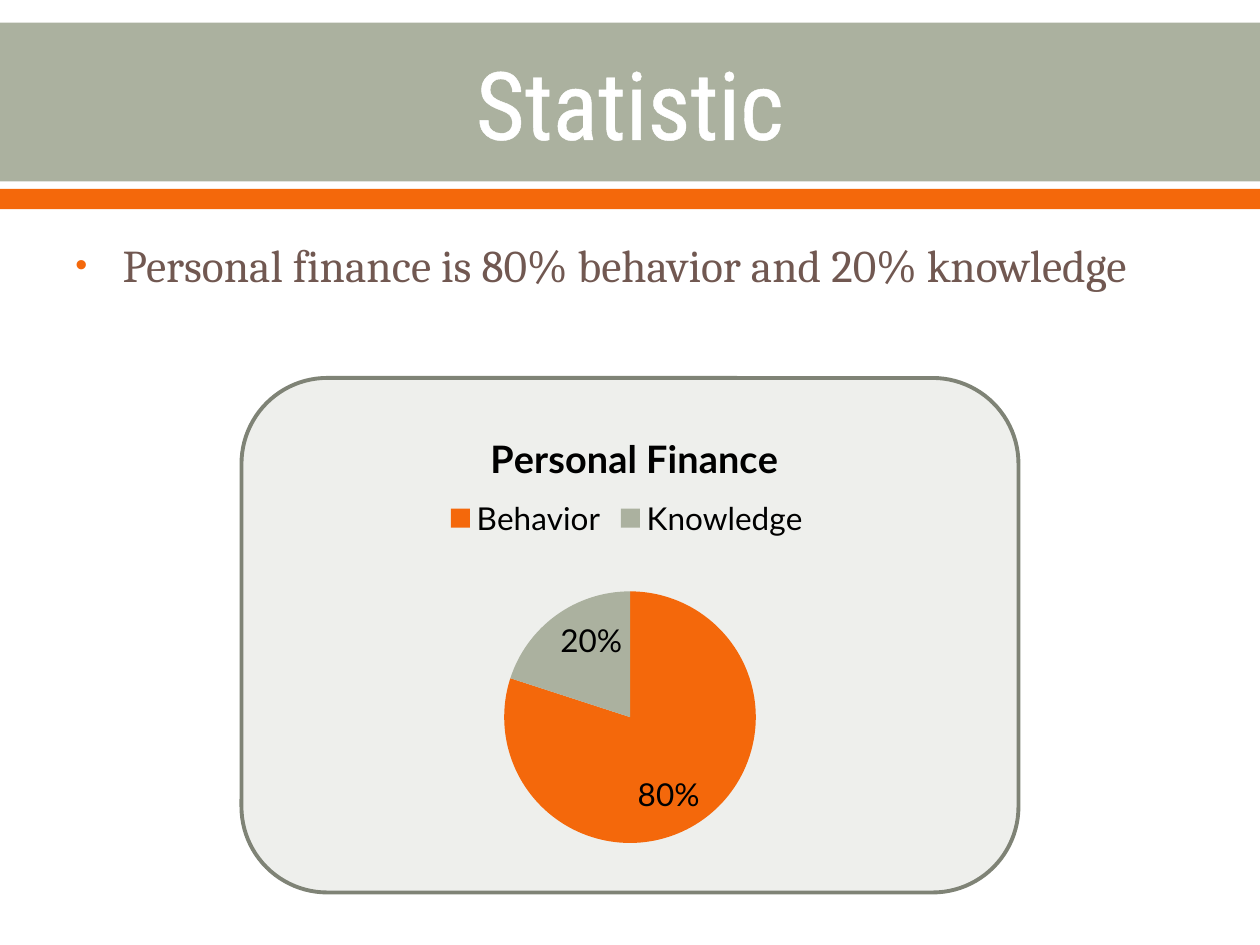
from dataclasses import dataclass

from lxml.etree import SubElement
from pptx import Presentation
from pptx.chart.data import CategoryChartData
from pptx.dml.color import RGBColor
from pptx.enum.chart import XL_CHART_TYPE, XL_LABEL_POSITION, XL_LEGEND_POSITION
from pptx.enum.shapes import MSO_SHAPE
from pptx.enum.text import MSO_ANCHOR, PP_ALIGN
from pptx.oxml import parse_xml
from pptx.oxml.ns import nsdecls, qn
from pptx.util import Pt

HEX = {
    "white": "FFFFFF", "sage": "ABB19F", "orange": "F4680B",
    "brown": "715851", "panel": "EEEFEC", "edge": "7F8376", "black": "000000",
}


@dataclass
class Box:
    left: float
    top: float
    width: float
    height: float

    def span(self) -> tuple:
        return Pt(self.left), Pt(self.top), Pt(self.width), Pt(self.height)


@dataclass
class Block:
    box: Box
    fill: str
    kind: MSO_SHAPE = MSO_SHAPE.RECTANGLE
    line: str = ""


BLOCKS = [
    Block(Box(0, 13, 720, 90.7), "sage"),
    Block(Box(0, 108, 720, 11.5), "orange"),
    Block(Box(138, 216, 444, 294), "panel", MSO_SHAPE.ROUNDED_RECTANGLE, "edge"),
]


def tint(name: str) -> RGBColor:
    return RGBColor.from_string(HEX[name])


def style(font, face: str, size: float, name: str, bold: bool = False) -> None:
    font.name, font.size, font.bold = face, Pt(size), bold
    font.color.rgb = tint(name)


def draw(slide, block: Block) -> None:
    shape = slide.shapes.add_shape(block.kind, *block.box.span())
    shape.shadow.inherit = False
    shape.fill.solid()
    shape.fill.fore_color.rgb = tint(block.fill)
    if block.line:
        shape.line.color.rgb = tint(block.line)
        shape.line.width = Pt(2.22)
    else:
        shape.line.fill.background()


def head(slide) -> None:
    title = slide.shapes.title
    title.left, title.top, title.width, title.height = Box(36, 14.4, 648, 87.8).span()
    frame = title.text_frame
    frame.vertical_anchor = MSO_ANCHOR.MIDDLE
    para = frame.paragraphs[0]
    para.alignment = PP_ALIGN.CENTER
    run = para.add_run()
    run.text = "Statistic"
    style(run.font, "Roboto Condensed", 54, "white")
    # Thin white outline on the letters
    run.font._element.insert(0, parse_xml(
        f'<a:ln {nsdecls("a")} w="{Pt(1.1)}"><a:solidFill>'
        f'<a:srgbClr val="{HEX["white"]}"/></a:solidFill></a:ln>'))
    # Bring the title in front of its band
    title.element.getparent().append(title.element)


def bullet(slide) -> None:
    frame = slide.shapes.add_textbox(*Box(36, 131.8, 648, 390).span()).text_frame
    frame.word_wrap = True
    para = frame.paragraphs[0]
    para.space_before = Pt(5.2)
    props = para._p.get_or_add_pPr()
    props.set("marL", str(Pt(27)))
    props.set("indent", str(Pt(-27)))
    color = SubElement(props, qn("a:buClr"))
    SubElement(color, qn("a:srgbClr"), val=HEX["orange"])
    SubElement(props, qn("a:buSzPct"), val="75000")
    SubElement(props, qn("a:buFont"), typeface="Arial")
    SubElement(props, qn("a:buChar"), char="•")
    run = para.add_run()
    run.text = "Personal finance is 80% behavior and 20% knowledge"
    style(run.font, "Cambria", 26, "brown")


def place(part, index: int, inner: bool = False, **spots: float) -> None:
    """Give a chart part a fixed place, in shares of the chart."""
    for old in part.findall(qn("c:layout")):
        part.remove(old)
    target = '<c:layoutTarget val="inner"/>' if inner else ""
    modes = '<c:xMode val="edge"/><c:yMode val="edge"/>'
    vals = "".join(f'<c:{key} val="{val}"/>' for key, val in spots.items())
    part.insert(index, parse_xml(
        f'<c:layout {nsdecls("c")}><c:manualLayout>{target}{modes}{vals}'
        '</c:manualLayout></c:layout>'))


def pie(slide) -> None:
    data = CategoryChartData()
    data.categories = ["Behavior", "Knowledge"]
    data.add_series("Personal Finance", [80, 20])
    chart = slide.shapes.add_chart(
        XL_CHART_TYPE.PIE, *Box(114, 228, 492, 282).span(), data).chart
    style(chart.font, "Lato", 18, "black")

    # Chart title
    chart.has_title = True
    run = chart.chart_title.text_frame.paragraphs[0].add_run()
    run.text = "Personal Finance"
    style(run.font, "Lato", 21.6, "black", True)

    # Legend
    chart.has_legend = True
    chart.legend.position = XL_LEGEND_POSITION.TOP
    chart.legend.include_in_layout = False

    # Slices and labels
    plot = chart.plots[0]
    plot.vary_by_categories = True
    for index, name in enumerate(["orange", "sage"]):
        fill = plot.series[0].points[index].format.fill
        fill.solid()
        fill.fore_color.rgb = tint(name)
    plot.has_data_labels = True
    labels = plot.data_labels
    labels.show_percentage, labels.show_value = True, False
    labels.number_format, labels.number_format_is_linked = "0%", False
    labels.position = XL_LABEL_POSITION.INSIDE_END
    style(labels.font, "Lato", 18, "black")

    # Places of the parts
    place(chart.chart_title._element, 1, x=0.33, y=0.05)
    place(chart.legend._element, 1, x=0.28, y=0.19)
    area = chart._chartSpace.find(".//" + qn("c:plotArea"))
    place(area, 0, True, x=0.35, y=0.39, w=0.3, h=0.51)


def main() -> None:
    deck = Presentation()
    deck.slide_width, deck.slide_height = Pt(720), Pt(540)
    slide = deck.slides.add_slide(deck.slide_layouts[5])
    for block in BLOCKS:
        draw(slide, block)
    head(slide)
    bullet(slide)
    pie(slide)
    deck.save("out.pptx")


if __name__ == "__main__":
    main()
